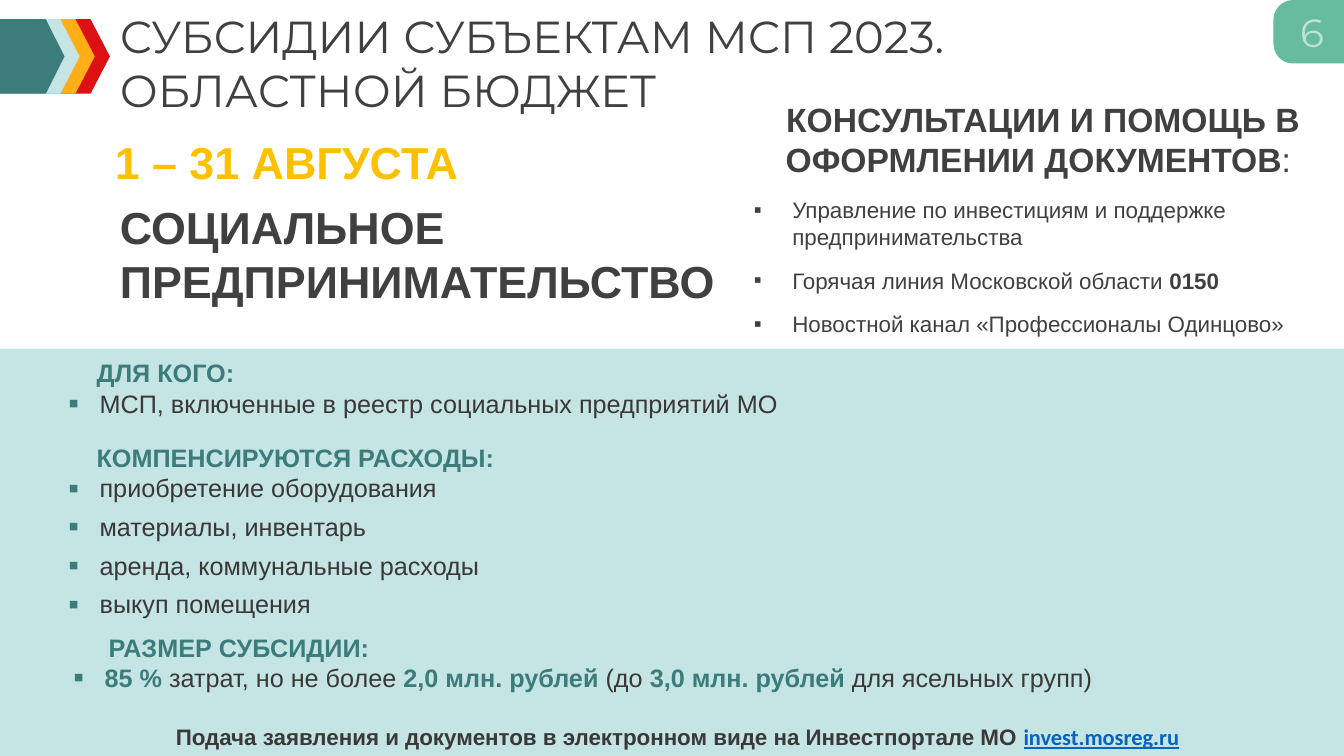
from lxml import etree
from pptx import Presentation
from pptx import util as u
from pptx.dml.color import RGBColor
from pptx.enum import shapes, text
from pptx.oxml.ns import qn

DARK, GREY, TEAL, MINT, GOLD = "404040", "3B3838", "3C7C7B", "C5E4E4", "FFC000"
SHAPE, CENTER = shapes.MSO_SHAPE, text.PP_ALIGN.CENTER


def rgb(value):
    return RGBColor.from_string(value)


class Deck:
    def __init__(self, prs):
        self.prs = prs
        self.s = prs.slides.add_slide(prs.slide_layouts[6])
        self.font = "Arial"

    def shape(self, kind, box, fill, adj=(), parent=None):
        sp = (parent or self.s).shapes.add_shape(kind, *map(u.Inches, box))
        sp.shadow.inherit = False
        sp.fill.solid()
        sp.fill.fore_color.rgb = rgb(fill)
        sp.line.fill.background()
        for i, value in enumerate(adj):
            sp.adjustments[i] = value
        return sp

    def text(self, box, paragraphs, **base):
        sp = self.s.shapes.add_textbox(*map(u.Inches, box))
        sp.text_frame.word_wrap = True
        sp.text_frame.auto_size = text.MSO_AUTO_SIZE.SHAPE_TO_FIT_TEXT
        self.fill_text(sp.text_frame, paragraphs, **base)

    def fill_text(self, tf, paragraphs, **base):
        """Each paragraph is (runs, paragraph format); each run is (words, run format)."""
        for i, (runs, layout) in enumerate(paragraphs):
            p = tf.add_paragraph() if i else tf.paragraphs[0]
            self.format_paragraph(p, **layout)
            for words, style in runs:
                r = p.add_run()
                r.text = words
                style = {"name": self.font, **base, **style}
                r.font.color.rgb = rgb(style.pop("color"))
                for key, value in style.items():
                    setattr(r.font, key, u.Pt(value) if key == "size" else value)

    def format_paragraph(self, p, bullet=None, indent=0, **layout):
        for key, value in layout.items():
            setattr(p, key, u.Pt(value) if key.startswith("space") else value)
        pPr = p._p.get_or_add_pPr()
        if indent:
            pPr.set("marL", str(u.Inches(indent)))
        if bullet:
            pPr.set("indent", str(-u.Inches(indent)))
            color, percent = bullet
            clr = etree.SubElement(pPr, qn("a:buClr"))
            etree.SubElement(clr, qn("a:srgbClr"), val=color)
            etree.SubElement(pPr, qn("a:buSzPct"), val=str(percent * 1000))
            etree.SubElement(pPr, qn("a:buFont"), typeface=self.font)
            etree.SubElement(pPr, qn("a:buChar"), char="▪")

    def section(self, box, heading, items, indent=0.28):
        """Teal heading over a bulleted list."""
        paragraphs = [([(heading, {"color": TEAL, "bold": True})], {"indent": indent})]
        for i, runs in enumerate(items):
            layout = {"bullet": (TEAL, 120), "indent": 0.31, "space_before": 6 if i else 0}
            paragraphs.append((runs, layout))
        self.text(box, paragraphs, size=18, color=GREY)


def main():
    prs = Presentation()
    prs.slide_width, prs.slide_height = u.Inches(13.33), u.Inches(7.5)
    deck = Deck(prs)

    deck.shape(SHAPE.RECTANGLE, (0, 3.46, 13.33, 4.04), MINT)
    deck.text((1.09, 0.04, 12.18, 1.18),
              [([("СУБСИДИИ СУБЪЕКТАМ МСП 2023.", {})], {}),
               ([("ОБЛАСТНОЙ БЮДЖЕТ", {})], {})],
              name="Montserrat", size=32, color=DARK)

    arrows = deck.s.shapes.add_group_shape()
    for i, fill in enumerate(("DD1013", "FFAE17", MINT, TEAL)):
        deck.shape(SHAPE.PENTAGON, (0, 0.19, 1.09 - 0.15 * i, 0.74), fill,
                   [0.29 if fill == TEAL else 0.26], arrows)

    tab = deck.shape(SHAPE.ROUND_2_SAME_RECTANGLE, (12.67, -0.04, 0.63, 0.71), "67BC9F", (0.31, 0))
    tab.rotation = 270
    tf = tab.text_frame
    tf.margin_left = tf.margin_right = 0
    tf.vertical_anchor = text.MSO_ANCHOR.MIDDLE
    tf._txBody.bodyPr.set("vert", "vert")
    deck.fill_text(tf, [([("6", {})], {"alignment": CENTER})],
                   name="Montserrat", size=28, color="BCE2D5")

    for box, words, color in (
        ((1.04, 1.29, 5.92, 0.64), "1 – 31 АВГУСТА", GOLD),
        ((1.09, 1.93, 6.19, 1.18), "СОЦИАЛЬНОЕ ПРЕДПРИНИМАТЕЛЬСТВО", DARK),
    ):
        deck.text(box, [([(words, {})], {})], size=32, bold=True, color=color)

    strong, teal = {"bold": True}, {"bold": True, "color": TEAL}
    gaps = {"space_before": 6, "space_after": 6}
    contacts = (
        [("Управление по инвестициям и поддержке предпринимательства", {})],
        [("Горячая линия Московской области ", {}), ("0150", strong)],
        [("Новостной канал «Профессионалы Одинцово»", {})],
    )
    help_title = [("КОНСУЛЬТАЦИИ И ПОМОЩЬ В ОФОРМЛЕНИИ ДОКУМЕНТОВ", {"size": 24, "bold": True}),
                  (": ", {"size": 24})]
    deck.text((7.38, 0.93, 5.93, 2.49),
              [(help_title, {"alignment": CENTER, **gaps})]
              + [(runs, {"bullet": (DARK, 100), "indent": 0.38, **gaps}) for runs in contacts],
              size=16, color=DARK)

    deck.section((0.58, 3.5, 12.55, 0.71), "ДЛЯ КОГО:",
                 [[("МСП, включенные в реестр социальных предприятий МО", {})]])
    expenses = ("приобретение оборудования", "материалы, инвентарь",
                "аренда, коммунальные расходы", "выкуп помещения")
    deck.section((0.58, 4.34, 9.01, 1.87), "КОМПЕНСИРУЮТСЯ РАСХОДЫ:",
                 [[(words, {})] for words in expenses])
    deck.section((0.63, 6.22, 12.69, 0.71), "РАЗМЕР СУБСИДИИ:",
                 [[("85 %", teal), (" затрат, но не более ", {}), ("2,0 млн. рублей ", teal),
                   ("(до ", {}), ("3,0 млн. рублей ", teal), ("для ясельных групп)", {})]],
                 indent=0.35)

    site = {"name": "Calibri", "color": "0563C1", "underline": True}
    deck.text((0.17, 7.13, 13.1, 0.37),
              [([("Подача заявления и документов в электронном виде на Инвестпортале МО ", {}),
                 ("invest.mosreg.ru", site)], {"alignment": CENTER})],
              size=16, bold=True, color=GREY)
    prs.save("out.pptx")


if __name__ == "__main__":
    main()
